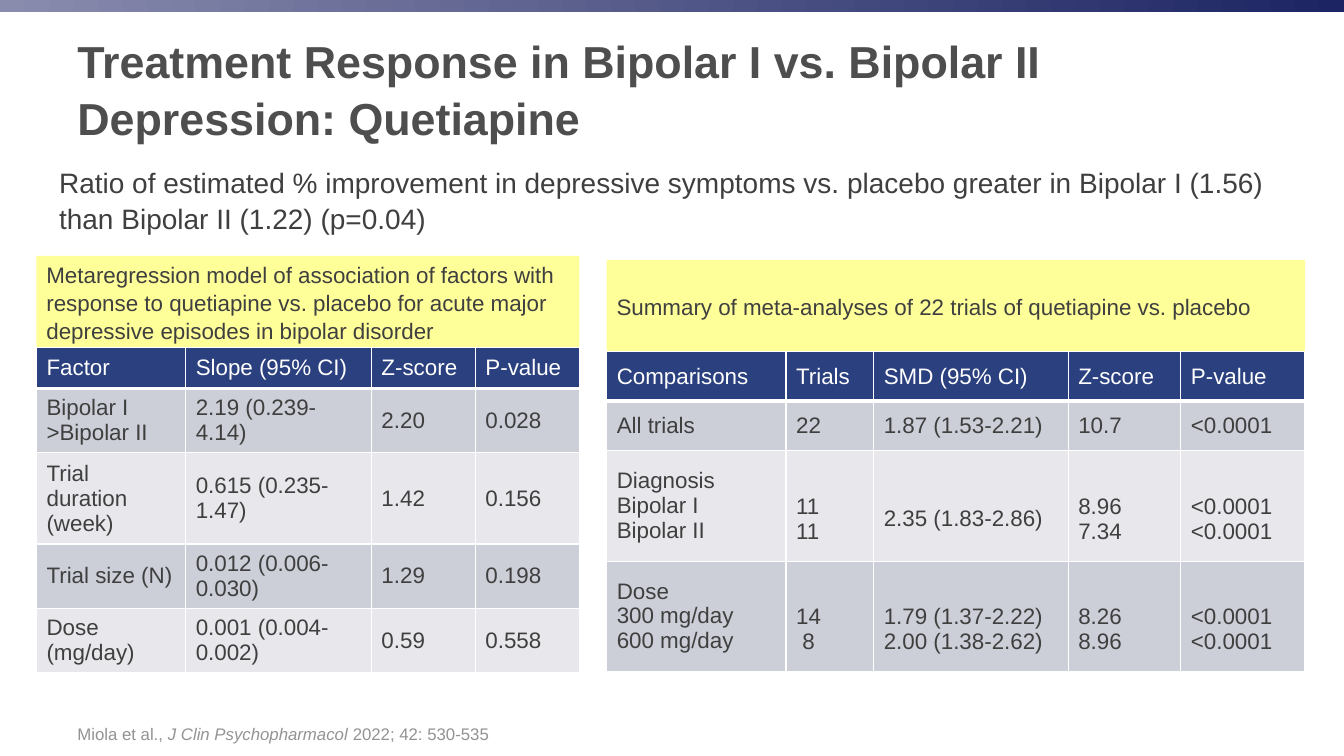
import pptx
import pptx.util
import pptx.dml.color
import pptx.enum.shapes
import pptx.enum.text
import pptx.oxml
import pptx.oxml.ns

Cm, Pt = pptx.util.Cm, pptx.util.Pt
RGB = pptx.dml.color.RGBColor
ANCHOR = pptx.enum.text.MSO_ANCHOR
RECT = pptx.enum.shapes.MSO_SHAPE.RECTANGLE

WHITE = RGB(0xFF, 0xFF, 0xFF)
LILAC = RGB(0x89, 0x8C, 0xAD)
NAVY = RGB(0x1C, 0x24, 0x63)
BLUE = RGB(0x2B, 0x40, 0x7E)
DARK = RGB(0x4D, 0x4E, 0x4D)
INK = RGB(0x3F, 0x3F, 0x3F)
GREY = RGB(0x93, 0x93, 0x93)
YELLOW = RGB(0xFF, 0xFF, 0x99)
BANDS = [RGB(0xE8, 0xE8, 0xEC), RGB(0xCD, 0xCF, 0xD8)]

WIDE, HIGH = 33.87, 19.05
SIZE = 16
LINE = SIZE * 1.15  # height of one table text line, in points

FACTORS = [
    ["Factor", "Slope (95% CI)", "Z-score", "P-value"],
    ["Bipolar I >Bipolar II", "2.19 (0.239-4.14)", "2.20", "0.028"],
    ["Trial duration (week)", "0.615 (0.235-1.47)", "1.42", "0.156"],
    ["Trial size (N)", "0.012 (0.006-0.030)", "1.29", "0.198"],
    ["Dose (mg/day)", "0.001 (0.004-0.002)", "0.59", "0.558"],
]
TRIALS = [
    ["Comparisons", "Trials", "SMD (95% CI)", "Z-score", "P-value"],
    ["All trials", "22", "1.87 (1.53-2.21)", "10.7", "<0.0001"],
    ["Diagnosis\nBipolar I\nBipolar II", "11\n11", "2.35 (1.83-2.86)",
     "8.96\n7.34", "<0.0001\n<0.0001"],
    ["Dose\n300 mg/day\n600 mg/day", "14\n 8",
     "1.79 (1.37-2.22)\n2.00 (1.38-2.62)", "8.26\n8.96", "<0.0001\n<0.0001"],
]


def style(frame, size, color, bold=False, space=None):
    for para in frame.paragraphs:
        para.alignment = pptx.enum.text.PP_ALIGN.LEFT
        para.line_spacing = space
        font = para.font
        font.name, font.size, font.bold = "Arial", Pt(size), bold
        font.color.rgb = color


def add_text(slide, box, runs, size, color, anchor, bold=False):
    """Add a text box; runs are (text, italic) pairs."""
    frame = slide.shapes.add_textbox(*map(Cm, box)).text_frame
    frame.word_wrap = True
    frame.vertical_anchor = anchor
    for text, slant in runs:
        run = frame.paragraphs[0].add_run()
        run.text = text
        if slant:
            run.font.italic = True
    style(frame, size, color, bold, 1.05)


def add_block(slide, box):
    block = slide.shapes.add_shape(RECT, *map(Cm, box))
    block.shadow.inherit = False
    block.line.fill.background()
    return block


def add_bar(slide, box):
    fill = add_block(slide, box).fill
    fill.gradient()
    fill.gradient_angle = 0
    for stop, color in zip(fill.gradient_stops, (LILAC, NAVY)):
        stop.color.rgb = color


def add_label(slide, box, text):
    block = add_block(slide, box)
    block.fill.solid()
    block.fill.fore_color.rgb = YELLOW
    frame = block.text_frame
    frame.word_wrap = True
    frame.vertical_anchor = ANCHOR.MIDDLE
    frame.text = text
    style(frame, SIZE, INK, space=1.05)


def add_edges(cell, head):
    props = cell._tc.get_or_add_tcPr()
    for spot, side in enumerate("LRTB"):
        width = Pt(3 if head and side == "B" else 1)
        props.insert(spot, pptx.oxml.parse_xml(
            f'<a:ln{side} {pptx.oxml.ns.nsdecls("a")} w="{width}"><a:solidFill>'
            f'<a:srgbClr val="{WHITE}"/></a:solidFill></a:ln{side}>'))


def add_panel(slide, box, label, data, cols, rows):
    """Place a yellow label with its table straight below."""
    left, top, width, height = box
    add_label(slide, box, label)
    table = slide.shapes.add_table(
        len(rows), len(cols), Cm(left), Cm(top + height),
        Cm(width), Cm(sum(rows))).table
    table.horz_banding = False
    for col, size in zip(table.columns, cols):
        col.width = Cm(size)
    for row, size in zip(table.rows, rows):
        row.height = Cm(size)
    for r, line in enumerate(data):
        head = r == 0
        for c, text in enumerate(line):
            cell = table.cell(r, c)
            cell.text = text
            cell.vertical_anchor = ANCHOR.MIDDLE
            if c and "\n" in line[0]:  # values start below the group name
                cell.margin_top = Pt(3.6 + LINE)
            cell.fill.solid()
            cell.fill.fore_color.rgb = BLUE if head else BANDS[r % 2]
            style(cell.text_frame, SIZE, WHITE if head else INK)
            add_edges(cell, head)


def build(slide):
    add_bar(slide, (0, 0, WIDE, 0.3))
    add_text(slide, (1.7, 0.56, 29.85, 3.3), [
        ("Treatment Response in Bipolar I vs. Bipolar II Depression: Quetiapine",
         False)], 32, DARK, ANCHOR.MIDDLE, True)
    add_text(slide, (1.24, 4.01, 31.47, 1.96), [
        ("Ratio of estimated % improvement in depressive symptoms vs. placebo "
         "greater in Bipolar I (1.56) than Bipolar II (1.22) (p=0.04)", False)],
        20, INK, ANCHOR.TOP)
    add_panel(slide, (0.92, 6.45, 13.68, 2.31),
              "Metaregression model of association of factors with\n"
              "response to quetiapine vs. placebo for acute major\n"
              "depressive episodes in bipolar disorder",
              FACTORS, [3.76, 4.68, 2.62, 2.62], [1.03, 1.62, 2.3, 1.62, 1.62])
    add_panel(slide, (15.29, 6.55, 17.6, 2.31),
              "Summary of meta-analyses of 22 trials of quetiapine vs. placebo",
              TRIALS, [4.52, 2.21, 4.9, 2.84, 3.13], [1.25, 1.25, 2.78, 2.78])
    add_text(slide, (1.7, 17.65, 29.85, 1.22), [
        ("Miola et al., ", False), ("J Clin Psychopharmacol ", True),
        ("2022; 42: 530-535", False)], 12, GREY, ANCHOR.BOTTOM)


def main():
    deck = pptx.Presentation()
    deck.slide_width, deck.slide_height = Cm(WIDE), Cm(HIGH)
    build(deck.slides.add_slide(deck.slide_layouts[6]))
    deck.save("out.pptx")


if __name__ == "__main__":
    main()
